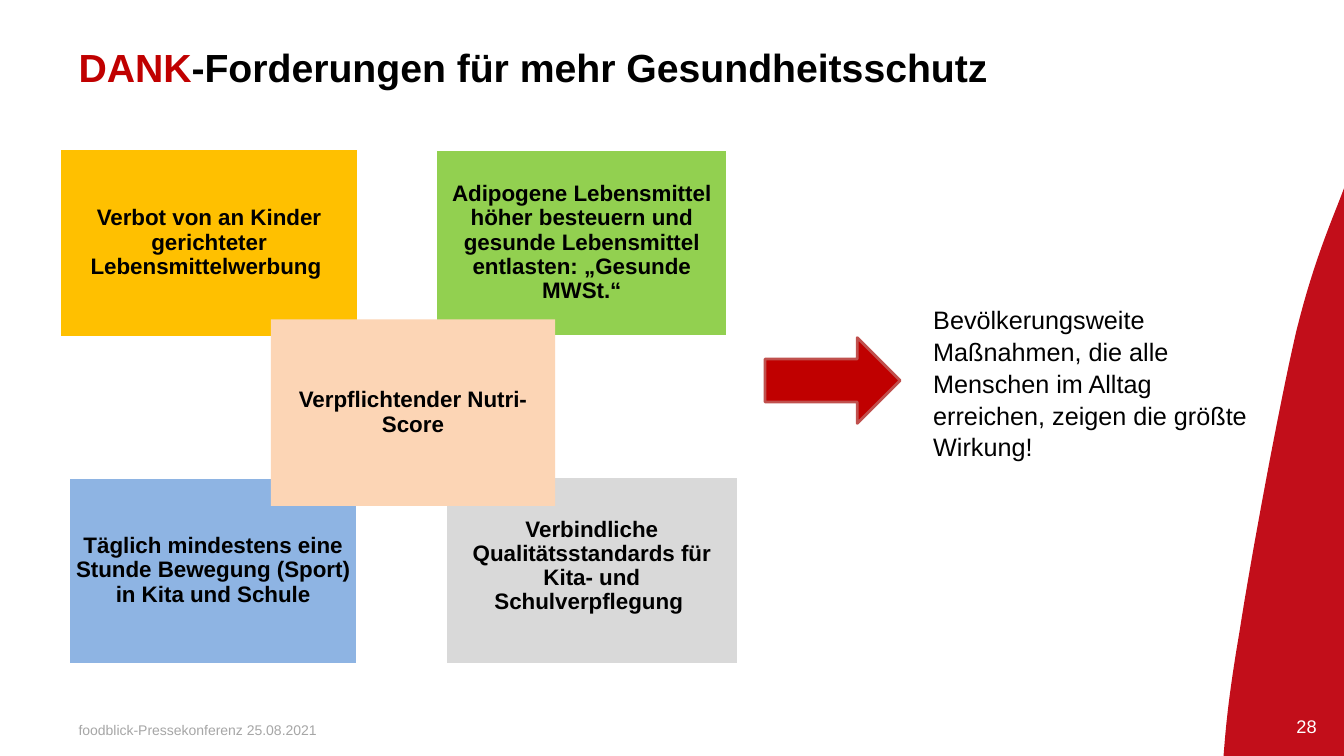
from pptx import Presentation
from pptx.dml.color import RGBColor
from pptx.enum.shapes import MSO_SHAPE
from pptx.enum.text import MSO_ANCHOR, PP_ALIGN
from pptx.util import Pt

THEME = {
    "font": "Arial",
    "black": "000000", "white": "FFFFFF", "footer": "A6A6A6",
    "accent": "C00000", "arrow_line": "C0504D", "swoosh": "C20E1A",
    "blue": "8EB4E3", "green": "92D050", "gray": "D9D9D9",
    "yellow": "FFC000", "peach": "FCD5B5",
    "title_size": 28, "message_size": 18, "demand_size": 16,
    "number_size": 13, "footer_size": 10,
}

SLIDE_WIDTH, SLIDE_HEIGHT = 960, 540
BOX_INSETS = (7.2, 3.6, 7.2, 3.6)
DEMAND_INSETS = (5, 5, 5, 5)
LIFTED_INSETS = (5, 5, 5, 10.8)

TITLE = [("DANK", "accent"), ("-Forderungen für mehr Gesundheitsschutz", "black")]
FOOTER = [("foodblick-Pressekonferenz 25.08.2021", "footer")]
PAGE_NUMBER = [("28", "white")]
MESSAGE = [("Bevölkerungsweite Maßnahmen, die alle Menschen im Alltag erreichen, "
            "zeigen die größte Wirkung!", "black")]

DEMANDS = [
    ("Täglich mindestens eine Stunde Bewegung (Sport) in Kita und Schule",
     "blue", "white", (49, 340.8, 206.6, 133.7), DEMAND_INSETS),
    ("Adipogene Lebensmittel höher besteuern und gesunde Lebensmittel entlasten: „Gesunde MWSt.“",
     "green", "white", (311.2, 106.9, 208.8, 133.2), DEMAND_INSETS),
    ("Verbindliche Qualitätsstandards für Kita- und Schulverpflegung ",
     "gray", "white", (318.4, 340.6, 208.8, 133.9), LIFTED_INSETS),
    ("Verbot von an Kinder gerichteter Lebensmittelwerbung ",
     "yellow", "white", (42.5, 106, 213.8, 135), DEMAND_INSETS),
    ("Verpflichtender Nutri-Score",
     "peach", None, (193.5, 228.2, 203, 133.2), DEMAND_INSETS),
]

ARROW_BOX = (546.5, 241.2, 96.5, 61.2)
SWOOSH_START = (960, 134.6)
SWOOSH_CURVES = [
    [(952.6, 154.8), (938.9, 184.3), (925.9, 236.9)],
    [(913.7, 289.4), (893.5, 398.9), (885.6, 450)],
    [(877, 500.4), (875.5, 521.3), (874, 540)],
]
STEPS = 16


def color(name):
    return RGBColor.from_string(THEME[name])


def points(values):
    return [Pt(value) for value in values]


def style_shape(shape, fill, line=None):
    shape.shadow.inherit = False
    shape.fill.solid()
    shape.fill.fore_color.rgb = color(fill)
    if line:
        shape.line.color.rgb = color(line)
        shape.line.width = Pt(2)
    else:
        shape.line.fill.background()


def write_text(shape, runs, size, bold=False, align=PP_ALIGN.LEFT,
               anchor=MSO_ANCHOR.TOP, spacing=1.0, insets=BOX_INSETS):
    frame = shape.text_frame
    frame.word_wrap = True
    frame.vertical_anchor = anchor
    (frame.margin_left, frame.margin_top,
     frame.margin_right, frame.margin_bottom) = points(insets)
    paragraph = frame.paragraphs[0]
    paragraph.alignment = align
    paragraph.line_spacing = spacing
    for text, name in runs:
        run = paragraph.add_run()
        run.text = text
        run.font.name = THEME["font"]
        run.font.size = Pt(THEME[size])
        run.font.bold = bold
        run.font.color.rgb = color(name)


def add_text(slide, box, runs, size, **options):
    write_text(slide.shapes.add_textbox(*points(box)), runs, size, **options)


def curve_points(start, curves):
    for first, second, end in curves:
        for step in range(1, STEPS + 1):
            t = step / STEPS
            weights = ((1 - t) ** 3, 3 * t * (1 - t) ** 2, 3 * t * t * (1 - t), t ** 3)
            corners = (start, first, second, end)
            yield tuple(Pt(sum(weight * corner[axis] for weight, corner in zip(weights, corners)))
                        for axis in (0, 1))
        start = end


def add_swoosh(slide):
    builder = slide.shapes.build_freeform(*points(SWOOSH_START))
    outline = list(curve_points(SWOOSH_START, SWOOSH_CURVES))
    outline.append(points((SLIDE_WIDTH, SLIDE_HEIGHT)))
    builder.add_line_segments(outline, close=True)
    style_shape(builder.convert_to_shape(), "swoosh")


def add_demand(slide, text, fill, line, box, insets):
    shape = slide.shapes.add_shape(MSO_SHAPE.RECTANGLE, *points(box))
    style_shape(shape, fill, line)
    write_text(shape, [(text, "black")], "demand_size", bold=True, align=PP_ALIGN.CENTER,
               anchor=MSO_ANCHOR.MIDDLE, spacing=0.9, insets=insets)


def main():
    presentation = Presentation()
    presentation.slide_width = Pt(SLIDE_WIDTH)
    presentation.slide_height = Pt(SLIDE_HEIGHT)
    slide = presentation.slides.add_slide(presentation.slide_layouts[6])

    add_swoosh(slide)
    add_text(slide, (879, 507, 68.5, 23), PAGE_NUMBER, "number_size",
             align=PP_ALIGN.RIGHT, anchor=MSO_ANCHOR.MIDDLE)
    add_text(slide, (49, 512.6, 666, 17.3), FOOTER, "footer_size", anchor=MSO_ANCHOR.MIDDLE)
    add_text(slide, (49, 27.4, 673.2, 85.7), TITLE, "title_size", bold=True)
    add_text(slide, (659.5, 213, 251.3, 116.6), MESSAGE, "message_size", spacing=1.05)

    arrow = slide.shapes.add_shape(MSO_SHAPE.RIGHT_ARROW, *points(ARROW_BOX))
    style_shape(arrow, "accent", "arrow_line")
    for demand in DEMANDS:
        add_demand(slide, *demand)

    presentation.save("out.pptx")


if __name__ == "__main__":
    main()
